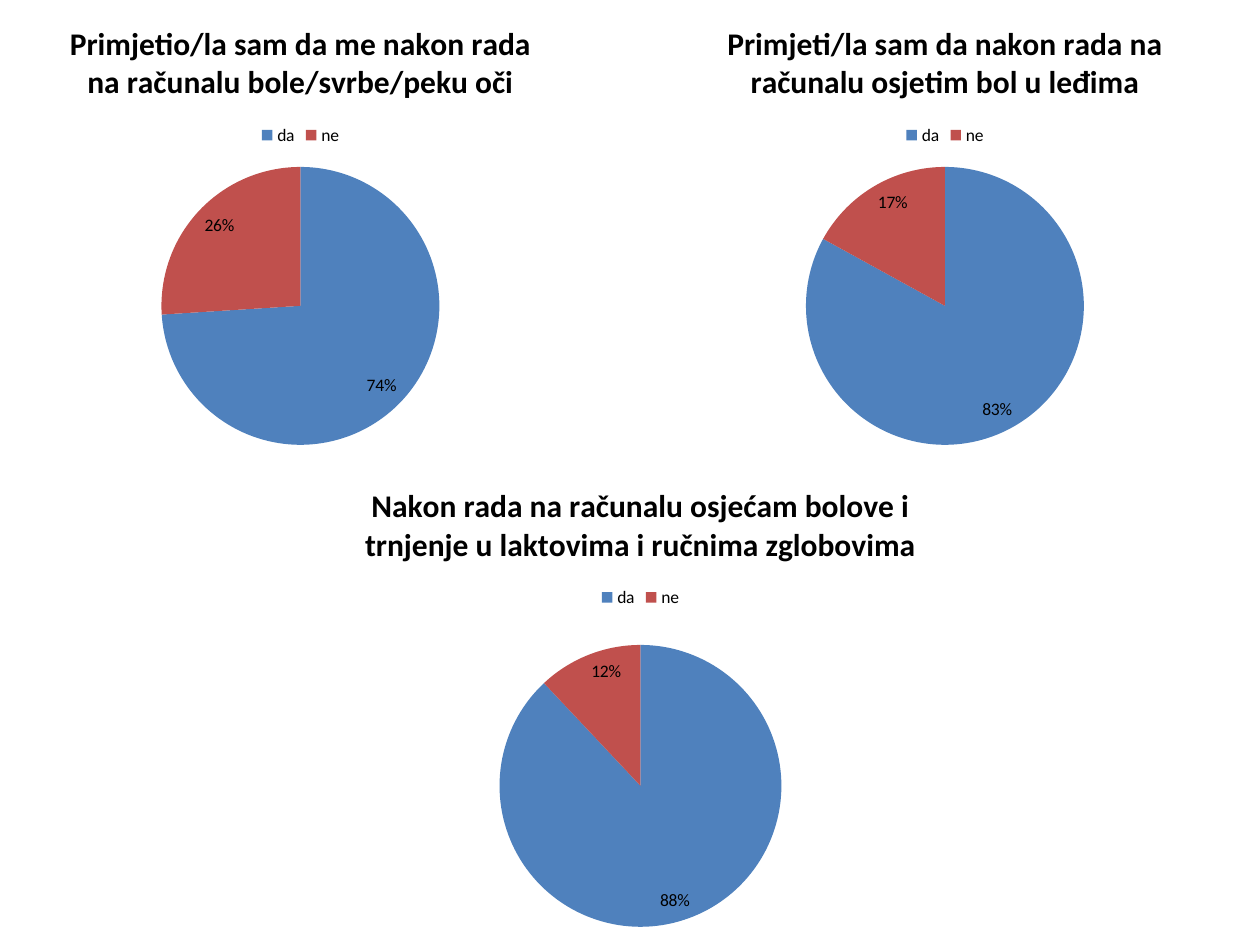
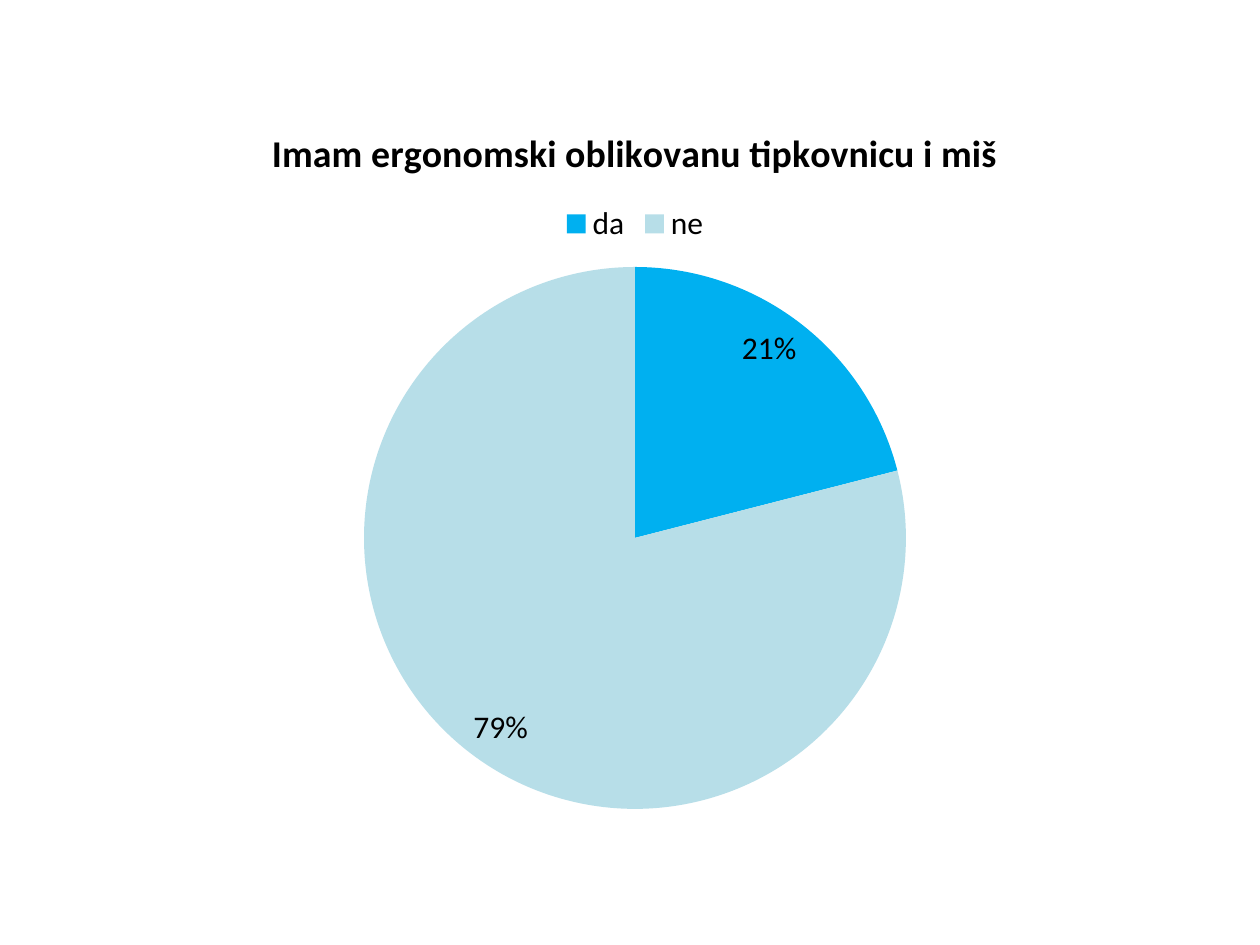
from lxml import etree
from pptx import Presentation
from pptx.chart.data import CategoryChartData
from pptx.dml.color import RGBColor
from pptx.enum.chart import XL_CHART_TYPE as ChartType
from pptx.enum.chart import XL_LABEL_POSITION as LabelPosition
from pptx.enum.chart import XL_LEGEND_POSITION as LegendPosition
from pptx.oxml.ns import qn
from pptx.util import Emu, Pt

PX = 914400 / 126
BLACK = RGBColor(0x00, 0x00, 0x00)
BLUE = RGBColor(0x4F, 0x81, 0xBD)
RED = RGBColor(0xC0, 0x50, 0x4D)
SKY = RGBColor(0x00, 0xB0, 0xF0)
PALE = RGBColor(0xB7, 0xDE, 0xE8)
SYMPTOM_COLOURS = (BLUE, RED)
EQUIPMENT_COLOURS = (SKY, PALE)
ANSWERS = ("da", "ne")


def px(length):
    return Emu(round(length * PX))


class SurveyDeck:
    """Survey slides of yes/no pie charts in one shared style."""

    font_name = "Calibri"

    def __init__(self, width, height):
        self.deck = Presentation()
        self.deck.slide_width, self.deck.slide_height = px(width), px(height)
        self.slide = None

    def add_slide(self):
        self.slide = self.deck.slides.add_slide(self.deck.slide_layouts[6])

    def style_font(self, font, size, bold=False):
        font.name, font.size, font.bold = self.font_name, Pt(size), bold
        font.color.rgb = BLACK

    def add_pie(self, question, shares, frame, pie_top, diameter,
                colours=SYMPTOM_COLOURS, text_size=10, title_size=18):
        answers = CategoryChartData(number_format="0")
        answers.categories = ANSWERS
        answers.add_series(question, shares)
        chart = self.slide.shapes.add_chart(
            ChartType.PIE, *map(px, frame), answers).chart
        self.style_font(chart.font, text_size)
        self.set_title(chart, question, title_size)
        self.set_legend(chart, text_size)
        self.set_slices(chart.plots[0], colours, text_size)
        self.place_pie(chart, frame, pie_top, diameter)

    def set_title(self, chart, question, size):
        chart.has_title = True
        title = chart.chart_title
        title.include_in_layout = False
        title.text_frame.text = question
        self.style_font(title.text_frame.paragraphs[0].runs[0].font, size, True)

    def set_legend(self, chart, size):
        chart.has_legend = True
        chart.legend.position = LegendPosition.TOP
        chart.legend.include_in_layout = False
        self.style_font(chart.legend.font, size)

    def set_slices(self, pie, colours, size):
        pie.vary_by_categories = True
        for index, colour in enumerate(colours):
            fill = pie.series[0].points[index].format.fill
            fill.solid()
            fill.fore_color.rgb = colour
        pie.has_data_labels = True
        labels = pie.data_labels
        labels.show_percentage, labels.show_value = True, False
        labels.number_format, labels.number_format_is_linked = "0%", False
        labels.position = LabelPosition.INSIDE_END
        self.style_font(labels.font, size)

    def place_pie(self, chart, frame, pie_top, diameter):
        _, top, width, height = frame
        plot_area = chart.plots[0]._element.getparent()
        for automatic in plot_area.findall(qn("c:layout")):
            plot_area.remove(automatic)
        layout = etree.Element(qn("c:layout"))
        manual = etree.SubElement(layout, qn("c:manualLayout"))
        settings = {
            "layoutTarget": "inner", "xMode": "edge", "yMode": "edge",
            "x": (width - diameter) / 2 / width, "y": (pie_top - top) / height,
            "w": diameter / width, "h": diameter / height,
        }
        for name, value in settings.items():
            etree.SubElement(manual, qn(f"c:{name}"), val=str(value))
        plot_area.insert(0, layout)


def main():
    survey = SurveyDeck(1260, 945)

    survey.add_slide()
    survey.add_pie("Primjetio/la sam da me nakon rada na računalu bole/svrbe/peku oči",
                   (74, 26), (0, 0, 601, 462), pie_top=167, diameter=278)
    survey.add_pie("Primjeti/la sam da nakon rada na računalu osjetim bol u leđima",
                   (83, 17), (630, 0, 630, 462), pie_top=167, diameter=278)
    survey.add_pie("Nakon rada na računalu osjećam bolove i trnjenje u laktovima "
                   "i ručnima zglobovima",
                   (88, 12), (286, 462, 709, 483), pie_top=645, diameter=282)

    survey.add_slide()
    survey.add_pie("Imam ergonomski oblikovanu tipkovnicu i miš",
                   (21, 79), (98, 98, 1074, 728), pie_top=267, diameter=542,
                   colours=EQUIPMENT_COLOURS, text_size=18, title_size=21.6)

    survey.deck.save("out.pptx")


if __name__ == "__main__":
    main()
